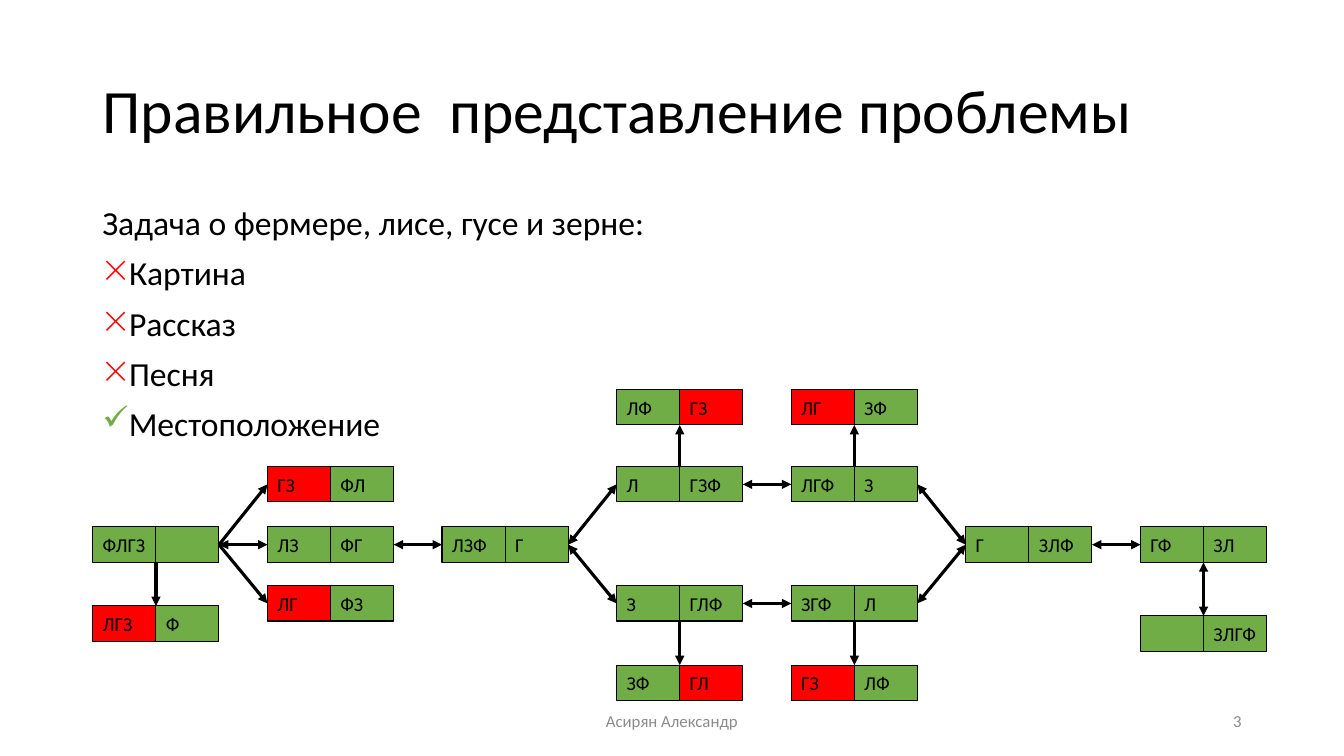
from dataclasses import dataclass
from typing import Any

from lxml.etree import SubElement
from pptx import Presentation
from pptx.dml.color import RGBColor
from pptx.enum.shapes import MSO_CONNECTOR, MSO_SHAPE
from pptx.enum.text import MSO_ANCHOR as Anchor, MSO_AUTO_SIZE as AutoSize, PP_ALIGN as Align
from pptx.oxml.ns import qn
from pptx.util import Cm, Pt

BLACK = RGBColor(0x00, 0x00, 0x00)
GREY = RGBColor(0x8C, 0x8C, 0x8C)
GREEN = RGBColor(0x70, 0xAD, 0x47)
RED = RGBColor(0xFF, 0x00, 0x00)

FIRST_COLUMN, COLUMN_STEP = 2.34, 4.4
BANK_WIDTH, BANK_HEIGHT = 1.59, 0.89
INDENT = 0.64


@dataclass(frozen=True)
class State:
    """Who stands on each bank; `lost` is the index of the bank where someone gets eaten."""
    column: int
    top: float
    banks: tuple[str, str]
    lost: int | None = None

    @property
    def left(self) -> float:
        return FIRST_COLUMN + COLUMN_STEP * self.column

    @property
    def right(self) -> float:
        return self.left + 2 * BANK_WIDTH

    @property
    def middle(self) -> float:
        return self.top + BANK_HEIGHT / 2


@dataclass(frozen=True)
class Crossing:
    start: State
    end: State
    reversible: bool = True


@dataclass(frozen=True)
class Line:
    text: str
    mark: str = ""
    mark_colour: RGBColor = RED


UPPER_FAIL, UPPER, MAIN, LOWER, LOWER_FAIL = 9.82, 11.76, 13.28, 14.76, 16.76

start = State(0, MAIN, ("ФЛГЗ", ""))
fox_grain = State(1, MAIN, ("ЛЗ", "ФГ"))
farmer_back = State(2, MAIN, ("ЛЗФ", "Г"))
fox_left = State(3, UPPER, ("Л", "ГЗФ"))
goose_with_fox = State(4, UPPER, ("ЛГФ", "З"))
grain_left = State(3, LOWER, ("З", "ГЛФ"))
goose_with_grain = State(4, LOWER, ("ЗГФ", "Л"))
goose_left = State(5, MAIN, ("Г", "ЗЛФ"))
last_trip = State(6, MAIN, ("ГФ", "ЗЛ"))
goal = State(6, 15.52, ("", "ЗЛГФ"))

FAILURES = [
    Crossing(start, State(0, 15.27, ("ЛГЗ", "Ф"), 0), False),
    Crossing(start, State(1, UPPER, ("ГЗ", "ФЛ"), 0), False),
    Crossing(start, State(1, LOWER, ("ЛГ", "ФЗ"), 0), False),
    Crossing(fox_left, State(3, UPPER_FAIL, ("ЛФ", "ГЗ"), 1), False),
    Crossing(goose_with_fox, State(4, UPPER_FAIL, ("ЛГ", "ЗФ"), 0), False),
    Crossing(grain_left, State(3, LOWER_FAIL, ("ЗФ", "ГЛ"), 1), False),
    Crossing(goose_with_grain, State(4, LOWER_FAIL, ("ГЗ", "ЛФ"), 0), False),
]
SOLUTIONS = [
    Crossing(start, fox_grain),
    Crossing(fox_grain, farmer_back),
    Crossing(farmer_back, fox_left),
    Crossing(farmer_back, grain_left),
    Crossing(fox_left, goose_with_fox),
    Crossing(grain_left, goose_with_grain),
    Crossing(goose_with_fox, goose_left),
    Crossing(goose_with_grain, goose_left),
    Crossing(goose_left, last_trip),
    Crossing(last_trip, goal),
]
LINES = [
    Line("Задача о фермере, лисе, гусе и зерне:"),
    Line("Картина", "×"),
    Line("Рассказ", "×"),
    Line("Песня", "×"),
    Line("Местоположение", "✓", GREEN),
]


def apply(target: Any, **values: Any) -> None:
    for attribute, value in values.items():
        setattr(target, attribute, value)


def write(paragraph: Any, text: str, size: float, colour: RGBColor = BLACK, **values: Any) -> None:
    run = paragraph.add_run()
    run.text = text
    apply(run.font, name="Calibri", size=Pt(size))
    run.font.color.rgb = colour
    apply(paragraph, **values)


def add_text_frame(slide: Any, left: float, top: float, width: float, height: float,
                   anchor: Anchor) -> Any:
    frame = slide.shapes.add_textbox(Cm(left), Cm(top), Cm(width), Cm(height)).text_frame
    apply(frame, word_wrap=True, vertical_anchor=anchor)
    return frame


def add_mark(paragraph: Any, line: Line) -> None:
    properties = paragraph._p.get_or_add_pPr()
    properties.set("marL", str(Cm(INDENT)))
    properties.set("indent", str(-Cm(INDENT)))
    colour = SubElement(properties, qn("a:buClr"))
    SubElement(colour, qn("a:srgbClr"), val=str(line.mark_colour))
    SubElement(properties, qn("a:buChar"), char=line.mark)


def draw_lines(slide: Any) -> None:
    frame = add_text_frame(slide, 2.33, 5.08, 29.21, 12.09, Anchor.TOP)
    for index, line in enumerate(LINES):
        paragraph = frame.add_paragraph() if index else frame.paragraphs[0]
        write(paragraph, line.text, 24, line_spacing=0.9, space_before=Pt(10))
        if line.mark:
            add_mark(paragraph, line)


def draw_state(slide: Any, state: State) -> None:
    for index, travellers in enumerate(state.banks):
        bank = slide.shapes.add_shape(
            MSO_SHAPE.RECTANGLE, Cm(state.left + index * BANK_WIDTH), Cm(state.top),
            Cm(BANK_WIDTH), Cm(BANK_HEIGHT))
        bank.shadow.inherit = False
        bank.fill.solid()
        bank.fill.fore_color.rgb = RED if index == state.lost else GREEN
        bank.line.color.rgb = BLACK
        bank.line.width = Pt(0.75)
        if travellers:
            apply(bank.text_frame, margin_right=0, word_wrap=True, vertical_anchor=Anchor.MIDDLE)
            write(bank.text_frame.paragraphs[0], travellers, 14, alignment=Align.LEFT)


def draw_crossing(slide: Any, crossing: Crossing) -> None:
    """Join facing edges: top and bottom within a column, sides between columns."""
    origin, target = crossing.start, crossing.end
    if origin.column == target.column:
        x1 = x2 = origin.left + BANK_WIDTH
        down = target.top > origin.top
        y1 = origin.top + BANK_HEIGHT * down
        y2 = target.top + BANK_HEIGHT * (not down)
    else:
        x1, y1, x2, y2 = origin.right, origin.middle, target.left, target.middle
    arrow = slide.shapes.add_connector(MSO_CONNECTOR.STRAIGHT, Cm(x1), Cm(y1), Cm(x2), Cm(y2))
    arrow.line.color.rgb = BLACK
    arrow.line.width = Pt(2.25)
    outline = arrow.line._get_or_add_ln()
    for end in ("a:headEnd", "a:tailEnd") if crossing.reversible else ("a:tailEnd",):
        SubElement(outline, qn(end), type="triangle")
    SubElement(arrow._element.spPr, qn("a:effectLst"))


def main() -> None:
    deck = Presentation()
    apply(deck, slide_width=Cm(33.87), slide_height=Cm(19.05))
    slide = deck.slides.add_slide(deck.slide_layouts.get_by_name("Title Only"))

    title = slide.shapes.title
    apply(title, left=Cm(2.33), top=Cm(1.01), width=Cm(29.21), height=Cm(3.68))
    apply(title.text_frame, auto_size=AutoSize.NONE, vertical_anchor=Anchor.MIDDLE)
    write(title.text_frame.paragraphs[0], "Правильное  представление проблемы", 44,
          alignment=Align.LEFT, line_spacing=0.9)

    draw_lines(slide)
    number = add_text_frame(slide, 23.92, 17.66, 7.62, 1.01, Anchor.MIDDLE)
    write(number.paragraphs[0], "3", 12, GREY, alignment=Align.RIGHT)
    author = add_text_frame(slide, 11.22, 17.66, 11.43, 1.01, Anchor.MIDDLE)
    write(author.paragraphs[0], "Асирян Александр", 12, GREY, alignment=Align.CENTER)

    crossings = SOLUTIONS + FAILURES
    for state in [start] + [crossing.end for crossing in crossings]:
        if state is not goose_left:
            draw_state(slide, state)
    draw_state(slide, goose_left)
    for crossing in crossings:
        draw_crossing(slide, crossing)

    deck.save("out.pptx")


if __name__ == "__main__":
    main()
